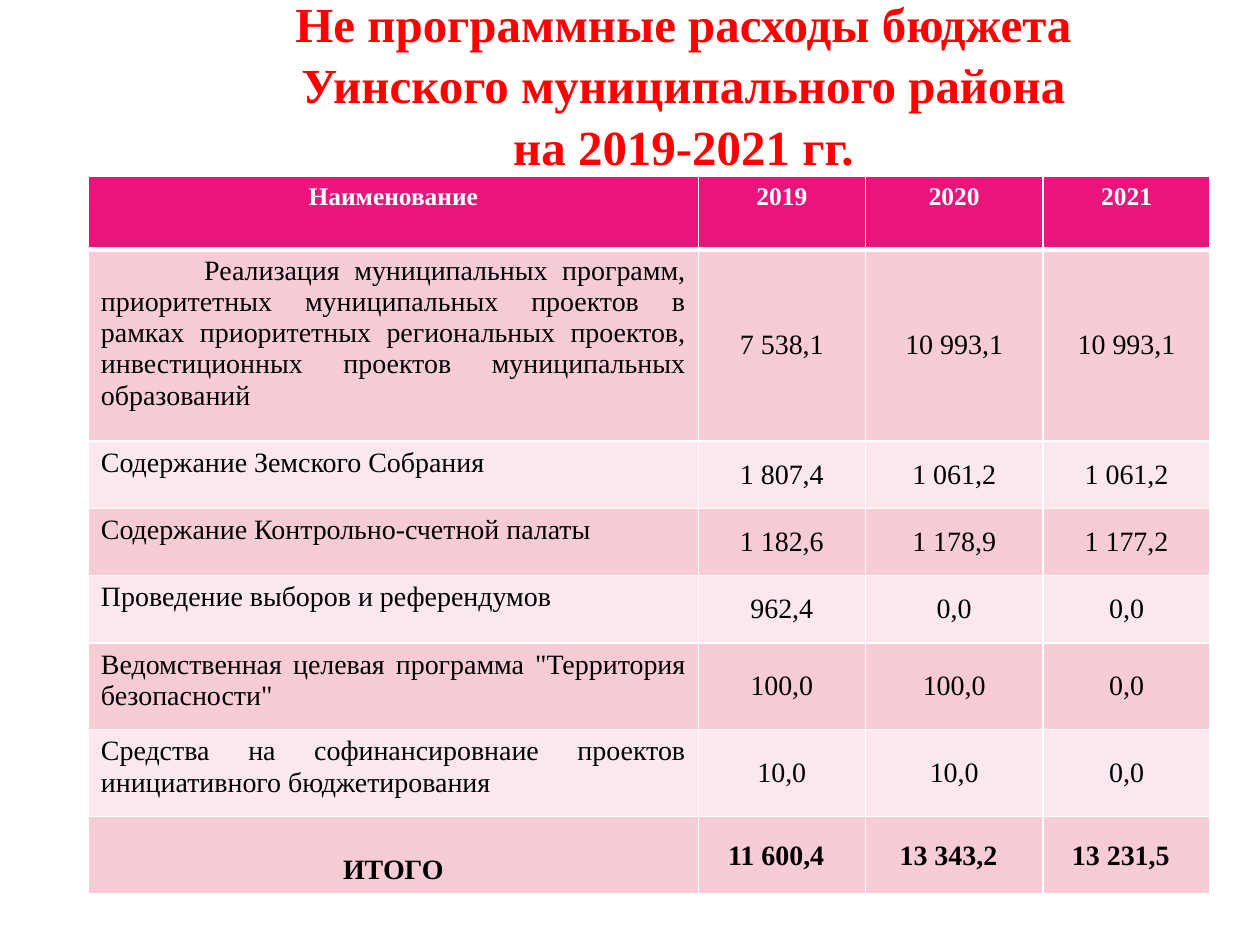
import pptx
import pptx.dml.color
import pptx.enum.text
import pptx.oxml.ns
import pptx.util
from lxml import etree

Pt = pptx.util.Pt
Align = pptx.enum.text.PP_ALIGN
Anchor = pptx.enum.text.MSO_ANCHOR
WHITE = "FFFFFF"


def color(value):
    return pptx.dml.color.RGBColor.from_string(value)


def format_text(paragraph, size, text_color, bold, alignment):
    paragraph.alignment = alignment
    for run in paragraph.runs:
        run.font.name = "Times New Roman"
        run.font.size = Pt(size)
        run.font.bold = bold
        run.font.color.rgb = color(text_color)


presentation = pptx.Presentation()
presentation.slide_width = Pt(720)
presentation.slide_height = Pt(540)
slide = presentation.slides.add_slide(presentation.slide_layouts[6])

# Title, raised above the table by a larger bottom margin
title = slide.shapes.add_textbox(Pt(106.5), Pt(16.5), Pt(568), Pt(90))
title_frame = title.text_frame
title_frame.word_wrap = True
title_frame.vertical_anchor = Anchor.MIDDLE
title_frame.margin_bottom = Pt(32)
title_frame.text = (
    "Не программные расходы бюджета\vУинского муниципального района\vна 2019-2021 гг."
)
title_frame.paragraphs[0].line_spacing = 1.05
format_text(title_frame.paragraphs[0], 28, "FF0000", True, Align.CENTER)

# Table contents and grid
rows = [
    ("Наименование", "2019", "2020", "2021"),
    ("Реализация муниципальных программ, приоритетных муниципальных проектов "
     "в рамках приоритетных региональных проектов, инвестиционных проектов "
     "муниципальных образований", "7 538,1", "10 993,1", "10 993,1"),
    ("Содержание Земского Собрания", "1 807,4", "1 061,2", "1 061,2"),
    ("Содержание Контрольно-счетной палаты", "1 182,6", "1 178,9", "1 177,2"),
    ("Проведение выборов и референдумов", "962,4", "0,0", "0,0"),
    ('Ведомственная целевая программа "Территория безопасности"',
     "100,0", "100,0", "0,0"),
    ("Средства на софинансировнаие проектов инициативного бюджетирования",
     "10,0", "10,0", "0,0"),
    ("ИТОГО", "11 600,4", "13 343,2", "13 231,5"),
]
column_widths = [348.5, 95.5, 101.5, 95.5]
row_heights = [41.5, 109.5, 38.5, 38.5, 38.5, 49.5, 49.5, 44.5]
total_row = len(rows) - 1

table = slide.shapes.add_table(
    len(rows), len(column_widths), Pt(50.5), Pt(101),
    Pt(sum(column_widths)), Pt(sum(row_heights)),
).table
for column, width in zip(table.columns, column_widths):
    column.width = Pt(width)
for row, height in zip(table.rows, row_heights):
    row.height = Pt(height)

for row_index, values in enumerate(rows):
    is_header = row_index == 0
    is_total = row_index == total_row
    fill_color = "EA157A" if is_header else ("FBE8EC", "F7CCD7")[row_index % 2]
    for column_index, value in enumerate(values):
        cell = table.cell(row_index, column_index)
        is_name = column_index == 0

        # White borders, thicker under the header
        properties = cell._tc.get_or_add_tcPr()
        for side in ("L", "R", "T", "B"):
            thick = (row_index, side) in ((0, "B"), (1, "T"))
            line = etree.SubElement(
                properties, pptx.oxml.ns.qn("a:ln" + side), w=str(Pt(3 if thick else 1)))
            line_fill = etree.SubElement(line, pptx.oxml.ns.qn("a:solidFill"))
            etree.SubElement(line_fill, pptx.oxml.ns.qn("a:srgbClr"), val=WHITE)
        cell.fill.solid()
        cell.fill.fore_color.rgb = color(fill_color)

        # Text and its alignment
        cell.text_frame.text = value
        paragraph = cell.text_frame.paragraphs[0]
        justified = is_name and not is_header and not is_total
        format_text(
            paragraph, 14.5 if is_header else 16, WHITE if is_header else "000000",
            is_header or is_total, Align.JUSTIFY if justified else Align.CENTER)
        cell.vertical_anchor = Anchor.TOP if is_header or is_name else Anchor.MIDDLE
        if is_total and is_name:
            cell.margin_top = Pt(22)
            cell.margin_bottom = Pt(0)
        elif is_total:
            cell.margin_left = cell.margin_top = Pt(0.7)
            cell.margin_bottom = Pt(0)

# First-line indent of the first expense
first_expense = table.cell(1, 0).text_frame.paragraphs[0]
first_expense._p.get_or_add_pPr().set("indent", str(Pt(59)))

presentation.save("out.pptx")
